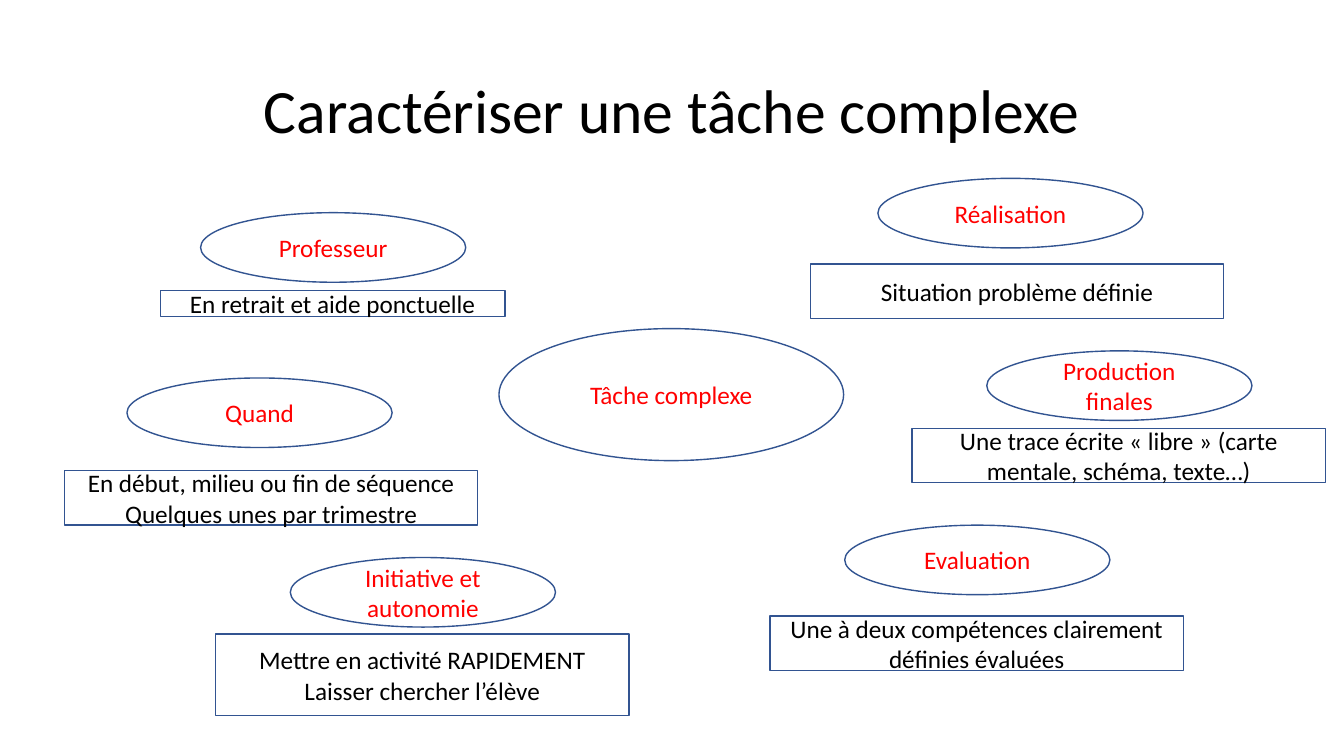
from pptx import Presentation
from pptx.dml.color import RGBColor
from pptx.enum.shapes import MSO_SHAPE
from pptx.enum.text import MSO_ANCHOR, PP_ALIGN
from pptx.util import Pt

BLACK = RGBColor(0, 0, 0)
RED = RGBColor(255, 0, 0)
BLUE = RGBColor(0x32, 0x54, 0x91)


def write(shape, text, size=18, color=BLACK, spacing=1.0):
    frame = shape.text_frame
    frame.word_wrap = True
    frame.vertical_anchor = MSO_ANCHOR.MIDDLE
    frame.text = text
    for para in frame.paragraphs:
        para.alignment = PP_ALIGN.CENTER
        para.line_spacing = spacing
        for run in para.runs:
            run.font.name = "Calibri"
            run.font.size = Pt(size)
            run.font.color.rgb = color


deck = Presentation()
deck.slide_width, deck.slide_height = Pt(960), Pt(540)
slide = deck.slides.add_slide(deck.slide_layouts[5])

title = slide.shapes.title
title.left, title.top, title.width, title.height = Pt(66), Pt(28.75), Pt(828), Pt(104.4)
write(title, "Caractériser une tâche complexe", size=44, spacing=0.9)

OVAL = (189.4, 49.7)
WIDE = (295.2, 38.9)
topics = [
    ("Tâche complexe", (356.4, 234.7, 246.2, 94.3)),
    ("Professeur", (143.3, 151.9, *OVAL)),
    ("Evaluation", (603.4, 375.1, *OVAL)),
    ("Réalisation", (627.1, 127.4, *OVAL)),
    ("Quand", (90.7, 270, *OVAL)),
    ("Initiative et autonomie", (207.4, 398.2, *OVAL)),
    ("Production finales", (704.9, 250.6, *OVAL)),
]
details = [
    ("En retrait et aide ponctuelle", (114.5, 207.4, 246.2, 18.7)),
    ("En début, milieu ou fin de séquence\nQuelques unes par trimestre", (46.1, 336.2, *WIDE)),
    ("Mettre en activité RAPIDEMENT\nLaisser chercher l’élève", (154.1, 452.9, 295.2, 58.3)),
    ("Une à deux compétences clairement définies évaluées", (550.1, 439.9, *WIDE)),
    ("Une trace écrite « libre » (carte mentale, schéma, texte…)", (651.6, 306, *WIDE)),
    ("Situation problème définie", (578.9, 188.6, *WIDE)),
]

for kind, color, items in [
    (MSO_SHAPE.OVAL, RED, topics),
    (MSO_SHAPE.RECTANGLE, BLACK, details),
]:
    for text, box in items:
        shape = slide.shapes.add_shape(kind, *map(Pt, box))
        shape.shadow.inherit = False
        shape.fill.background()
        shape.line.color.rgb = BLUE
        shape.line.width = Pt(1)
        write(shape, text, color=color)

deck.save("out.pptx")
